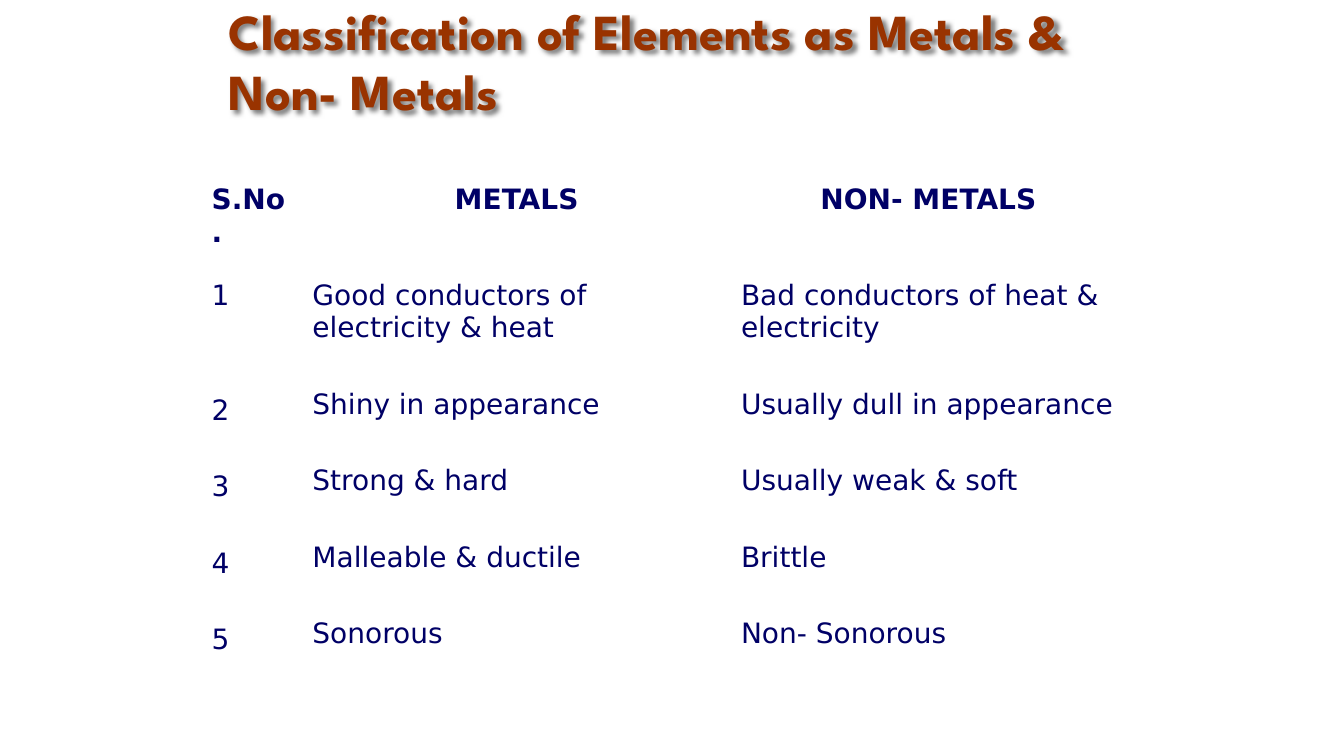
from lxml.etree import SubElement
from pptx import Presentation
from pptx.dml.color import RGBColor
from pptx.enum.text import MSO_ANCHOR, MSO_AUTO_SIZE, PP_ALIGN
from pptx.oxml import parse_xml
from pptx.oxml.ns import nsdecls, qn
from pptx.util import Cm, Pt

TITLE = "Classification of Elements as Metals & Non- Metals"
HEADERS = ["S.No.", "METALS", "NON- METALS"]
PROPERTIES = [
    ("1", "Good conductors of electricity & heat", "Bad conductors of heat & electricity"),
    ("2", "Shiny in appearance", "Usually dull in appearance"),
    ("3", "Strong & hard", "Usually weak & soft"),
    ("4", "Malleable & ductile", "Brittle"),
    ("5", "Sonorous", "Non- Sonorous"),
]
COLORS = {"title": "993300", "text": "000066", "border": "FFFFFF", "shadow": "000000"}
COLUMN_WIDTHS = [2.54, 10.8, 9.95]
ROW_HEIGHTS = [2.41, 10.24]
ITEM_GAP = 31.3
WRAPPED_ITEM_GAP = 58.9  # the numbers skip the second line of the first property
OUTER_BORDER, INNER_BORDER = 2.25, 1


def write(frame, lines, font="DejaVu Sans", size=20, color="text", bold=False,
          align=PP_ALIGN.LEFT, gaps=()):
    """Write one paragraph a line; gaps holds the points before each line after the first."""
    for index, line in enumerate(lines):
        paragraph = frame.paragraphs[0] if index == 0 else frame.add_paragraph()
        paragraph.alignment = align
        paragraph.space_before = Pt(gaps[index - 1] if index else 0)
        run = paragraph.add_run()
        run.text = line
        run.font.name = font
        run.font.size = Pt(size)
        run.font.bold = bold
        run.font.color.rgb = RGBColor.from_string(COLORS[color])


def set_borders(cell, widths):
    properties = cell._tc.get_or_add_tcPr()
    for index, (side, width) in enumerate(widths.items()):
        line = SubElement(properties, qn(f"a:ln{side}"), w=str(Pt(width)))
        fill = SubElement(line, qn("a:solidFill"))
        SubElement(fill, qn("a:srgbClr"), val=COLORS["border"])
        properties.insert(index, line)


def add_title(slide):
    title = slide.shapes.title
    title.left, title.top, title.width, title.height = Cm(5.51), Cm(1.47), Cm(22.86), Cm(1.7)
    frame = title.text_frame
    frame.word_wrap = True
    frame.auto_size = MSO_AUTO_SIZE.NONE
    frame.vertical_anchor = MSO_ANCHOR.BOTTOM
    write(frame, [TITLE], font="League Spartan", size=36, color="title", bold=True)
    title._element.spPr.append(parse_xml(
        f'<a:effectLst {nsdecls("a")}><a:outerShdw blurRad="38100" dist="38100" dir="2700000">'
        f'<a:srgbClr val="{COLORS["shadow"]}"><a:alpha val="50000"/></a:srgbClr>'
        '</a:outerShdw></a:effectLst>'))


def add_property_table(slide):
    table = slide.shapes.add_table(
        len(ROW_HEIGHTS), len(HEADERS), Cm(5.08), Cm(4.5),
        Cm(sum(COLUMN_WIDTHS)), Cm(sum(ROW_HEIGHTS))).table
    table.first_row = table.horz_banding = False
    for row, height in zip(table.rows, ROW_HEIGHTS):
        row.height = Cm(height)

    last = len(HEADERS) - 1
    for index, (header, items) in enumerate(zip(HEADERS, zip(*PROPERTIES))):
        table.columns[index].width = Cm(COLUMN_WIDTHS[index])
        head, body = table.cell(0, index), table.cell(1, index)
        write(head.text_frame, [header], bold=True,
              align=PP_ALIGN.CENTER if index else PP_ALIGN.LEFT)
        first_gap = ITEM_GAP if index else WRAPPED_ITEM_GAP
        write(body.text_frame, items, gaps=[first_gap] + [ITEM_GAP] * (len(items) - 2))
        for cell in (head, body):
            cell.fill.background()
            set_borders(cell, {
                "L": OUTER_BORDER if index == 0 else INNER_BORDER,
                "R": OUTER_BORDER if index == last else INNER_BORDER,
                "T": OUTER_BORDER if cell is head else INNER_BORDER,
                "B": OUTER_BORDER if cell is body else INNER_BORDER,
            })


def main():
    presentation = Presentation()
    presentation.slide_width, presentation.slide_height = Cm(33.87), Cm(19.05)
    slide = presentation.slides.add_slide(presentation.slide_layouts[5])
    add_title(slide)
    add_property_table(slide)
    presentation.save("out.pptx")


if __name__ == "__main__":
    main()
